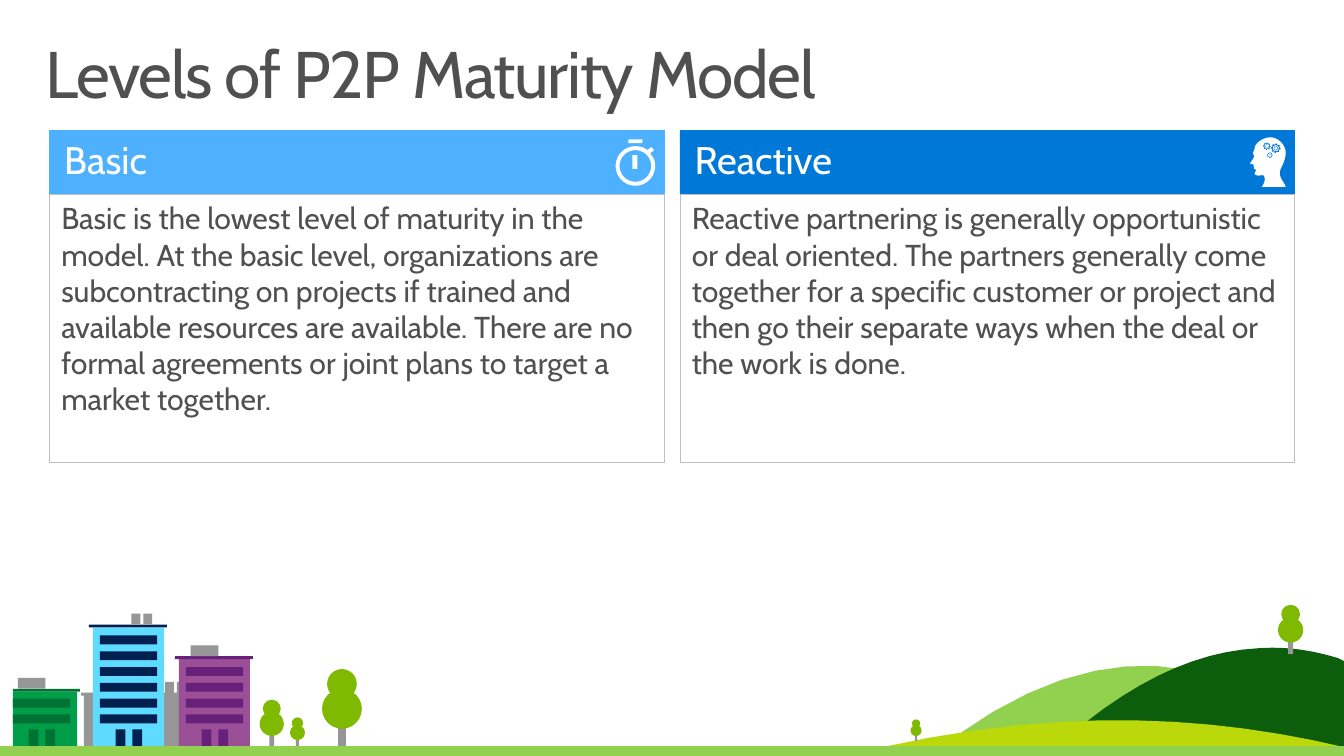
"""Build the P2P maturity levels slide."""
from dataclasses import dataclass
from math import cos, pi, sin

from pptx import Presentation
from pptx.dml.color import RGBColor
from pptx.enum.shapes import MSO_SHAPE
from pptx.enum.text import MSO_ANCHOR, PP_ALIGN
from pptx.util import Inches, Pt


@dataclass(frozen=True)
class Theme:
    """Colours, font and type sizes of the slide."""
    font: str = "Cabin"
    title: int = 48
    heading: int = 28
    body: int = 22
    text: str = "505050"
    white: str = "FFFFFF"
    border: str = "BFBFBF"
    basic: str = "4EB1FF"
    reactive: str = "0078D7"
    grey: str = "969696"
    leaf: str = "7FBA00"
    grass: str = "92D050"
    hill: str = "0C5D0C"
    meadow: str = "BAD80A"
    purple: str = "9B4F96"
    purple_trim: str = "68217A"
    green: str = "009E49"
    green_trim: str = "007233"
    sky: str = "5EDBFF"
    navy: str = "002050"


T = Theme()
GROUND = 7.57
CARDS = (
    (0.5, T.basic, "Basic",
     "Basic is the lowest level of maturity in the model. At the basic level, "
     "organizations are subcontracting on projects if trained and available "
     "resources are available. There are no formal agreements or joint plans "
     "to target a market together."),
    (6.88, T.reactive, "Reactive",
     "Reactive partnering is generally opportunistic or deal oriented. The "
     "partners generally come together for a specific customer or project and "
     "then go their separate ways when the deal or the work is done."),
)


def write_text(tf, text, *, size, color=T.text, anchor=MSO_ANCHOR.TOP,
               inset=(0.12, 0.06), line_spacing=None, tracking=None):
    """Fill a text frame with one formatted paragraph."""
    tf.word_wrap = True
    tf.vertical_anchor = anchor
    tf.margin_left = tf.margin_right = Inches(inset[0])
    tf.margin_top = tf.margin_bottom = Inches(inset[1])
    p = tf.paragraphs[0]
    p.alignment = PP_ALIGN.LEFT
    if line_spacing:
        p.line_spacing = line_spacing
    r = p.add_run()
    r.text = text
    r.font.name = T.font
    r.font.size = Pt(size)
    r.font.color.rgb = RGBColor.from_string(color)
    if tracking:
        r.font._element.set("spc", str(tracking * 100))


def paint(sp, fill, line=None):
    """Give a shape a flat fill and an optional hairline."""
    sp.shadow.inherit = False
    sp.fill.solid()
    sp.fill.fore_color.rgb = RGBColor.from_string(fill)
    if line:
        sp.line.color.rgb = RGBColor.from_string(line)
        sp.line.width = Pt(0.25)
    else:
        sp.line.fill.background()
    return sp


def add_box(s, left, top, width, height, fill, line=None, kind=MSO_SHAPE.RECTANGLE):
    """Add a preset shape measured in inches."""
    sp = s.shapes.add_shape(kind, Inches(left), Inches(top), Inches(width), Inches(height))
    return paint(sp, fill, line)


def add_disc(s, cx, cy, size, fill):
    """Add a circle around a centre."""
    add_box(s, cx - size / 2, cy - size / 2, size, size, fill, kind=MSO_SHAPE.OVAL)


def trace(start, *steps, samples=12):
    """Return outline points from line (x, y) and cubic (six number) steps."""
    points = [start]
    for step in steps:
        if len(step) == 2:
            points.append(step)
            continue
        x0, y0 = points[-1]
        x1, y1, x2, y2, x3, y3 = step
        for i in range(1, samples + 1):
            t = i / samples
            u = 1 - t
            a, b, c, d = u ** 3, 3 * u * u * t, 3 * u * t * t, t ** 3
            points.append((a * x0 + b * x1 + c * x2 + d * x3,
                           a * y0 + b * y1 + c * y2 + d * y3))
    return points


def ring(cx, cy, radii, count=48):
    """Return points around a centre, cycling through the radii."""
    return [(cx + radii[i % len(radii)] * cos(2 * pi * i / count),
             cy + radii[i % len(radii)] * sin(2 * pi * i / count)) for i in range(count)]


def add_outline(s, fill, *contours):
    """Add one freeform made of closed contours."""
    builder = None
    for contour in contours:
        first, *rest = [(Inches(x), Inches(y)) for x, y in contour]
        if builder is None:
            builder = s.shapes.build_freeform(*first)
        else:
            builder.move_to(*first)
        builder.add_line_segments(rest, close=True)
    paint(builder.convert_to_shape(), fill)


def add_back_block(s, left):
    """Add a grey block with two chimneys behind the buildings."""
    profile = ((0, 0.11), (0.43, 0.11), (0.43, 0), (0.52, 0), (0.52, 0.11), (0.55, 0.11),
               (0.55, 0), (0.63, 0), (0.63, 0.11), (0.79, 0.11), (0.79, 0.14),
               (0.75, 0.14), (0.75, 0.67), (0.03, 0.67), (0.03, 0.14), (0, 0.14))
    add_outline(s, T.grey, [(left + x, 6.9 + y) for x, y in profile])


def add_building(s, left, top, floors, wall, trim, chimneys, edge=0.0):
    """Add a building with roof, doors, windows and chimneys, cut at the edge."""
    parts = [(0, top, 0.72, GROUND - top, wall), (-0.04, top - 0.03, 0.79, 0.03, trim)]
    parts += [(x, 7.38, 0.1, 0.18, trim) for x in (0.23, 0.4)]
    parts += [(0.07, 7.23 - 0.16 * i, 0.58, 0.09, trim) for i in range(floors)]
    parts += [(x, top - 0.14, width, 0.11, T.grey) for x, width in chimneys]
    for x, y, width, height, fill in parts:
        start = max(left + x, edge)
        add_box(s, start, y, left + x + width - start, height, fill)


def add_tree(s, cx, base, height):
    """Add a tree whose parts scale with its height."""
    add_box(s, cx - 0.05 * height, base - 0.39 * height, 0.1 * height, 0.39 * height, T.grey)
    add_disc(s, cx, base - 0.49 * height, 0.51 * height, T.leaf)
    add_disc(s, cx, base - 0.81 * height, 0.38 * height, T.leaf)


def add_town(s):
    """Add the buildings and the trees beside them."""
    for left in (1.24, 0.82):
        add_back_block(s, left)
    add_building(s, 1.81, 6.67, 4, T.purple, T.purple_trim, [(0.12, 0.28)])
    add_building(s, 0.06, 7, 2, T.green, T.green_trim, [(0.12, 0.28)], edge=0.13)
    add_building(s, 0.94, 6.35, 6, T.sky, T.navy, [(0.39, 0.09), (0.51, 0.09)])
    for cx, height in ((2.75, 0.48), (3.01, 0.3), (3.46, 0.79)):
        add_tree(s, cx, 7.56, height)


def add_landscape(s):
    """Add the hills, their trees and the strip of grass."""
    add_outline(s, T.grass, trace((13.36, 7.44), (9.67, 7.45),
                                  (11.19, 6.36, 12.36, 6.65, 13.36, 7.44)))
    add_outline(s, T.hill, trace((12.74, 6.56), (13.01, 6.54, 13.28, 6.58, 13.54, 6.66),
                                 (13.6, 6.69), (13.6, 7.63), (10.6, 7.64),
                                 (11.39, 6.91, 12.09, 6.59, 12.74, 6.56)))
    add_outline(s, T.meadow, trace((13.6, 7.56), (8.93, 7.56),
                                   (10.84, 7.14, 12.33, 7.26, 13.6, 7.56)))
    add_tree(s, 9.27, 7.5, 0.22)
    add_tree(s, 13.06, 6.62, 0.5)
    add_box(s, 0, 7.55, 13.6, 0.1, T.grass)


def add_card(s, left, color, heading, body):
    """Add a bordered text panel under a coloured heading bar."""
    panel = add_box(s, left, 1.96, 6.22, 2.72, T.white, T.border)
    write_text(panel.text_frame, body, size=T.body)
    bar = add_box(s, left, 1.32, 6.22, 0.64, color, color)
    write_text(bar.text_frame, heading, size=T.heading, color=T.white,
               anchor=MSO_ANCHOR.MIDDLE, inset=(0.15, 0.08), line_spacing=0.9)


def add_stopwatch(s):
    """Add the stopwatch icon."""
    case = trace((6.43, 1.48), (6.47, 1.48, 6.51, 1.49, 6.54, 1.51), (6.55, 1.52),
                 (6.59, 1.49), (6.62, 1.52), (6.58, 1.55), (6.59, 1.57),
                 (6.62, 1.6, 6.63, 1.64, 6.63, 1.68), (6.63, 1.79, 6.54, 1.88, 6.43, 1.88),
                 (6.32, 1.88, 6.23, 1.79, 6.23, 1.68), (6.23, 1.57, 6.32, 1.48, 6.43, 1.48))
    hand = [(6.4, 1.57), (6.45, 1.57), (6.45, 1.71), (6.4, 1.71)]
    button = [(6.36, 1.41), (6.5, 1.41), (6.5, 1.45), (6.36, 1.45)]
    add_outline(s, T.white, case, ring(6.43, 1.68, [0.16]), hand, button)


def add_thinker(s):
    """Add the head icon with three gears cut out."""
    head = trace((12.86, 1.39), (12.78, 1.39, 12.72, 1.44, 12.7, 1.48),
                 (12.69, 1.53, 12.7, 1.49, 12.68, 1.55), (12.68, 1.57, 12.7, 1.57, 12.69, 1.58),
                 (12.69, 1.6, 12.66, 1.64, 12.65, 1.65), (12.65, 1.66, 12.68, 1.66, 12.69, 1.67),
                 (12.69, 1.67, 12.68, 1.69, 12.69, 1.69), (12.69, 1.71),
                 (12.69, 1.71, 12.7, 1.71, 12.71, 1.72), (12.71, 1.74, 12.68, 1.76, 12.71, 1.77),
                 (12.74, 1.79, 12.78, 1.76, 12.79, 1.78), (12.8, 1.8, 12.81, 1.83, 12.77, 1.89),
                 (13.01, 1.89), (13, 1.85, 12.95, 1.81, 12.95, 1.75),
                 (12.95, 1.7, 13, 1.66, 13.01, 1.56), (13.02, 1.47, 12.93, 1.39, 12.86, 1.39))
    gears = []
    for cx, cy, size in ((12.82, 1.48, 0.04), (12.91, 1.5, 0.05), (12.85, 1.57, 0.03)):
        gears.append(ring(cx, cy, [size, size, 0.8 * size, 0.8 * size], 32))
        gears += [ring(cx, cy, [size * part], 24) for part in (0.6, 0.45, 0.3)]
    add_outline(s, T.white, head, *gears)


def main():
    """Build and save the slide."""
    prs = Presentation()
    prs.slide_width, prs.slide_height = Inches(13.6), Inches(7.65)
    s = prs.slides.add_slide(prs.slide_layouts[6])
    title = s.shapes.add_textbox(Inches(0.3), Inches(0.32), Inches(13), Inches(1))
    write_text(title.text_frame, "Levels of P2P Maturity Model", size=T.title,
               inset=(0.16, 0.1), line_spacing=0.9, tracking=-1)
    add_town(s)
    add_landscape(s)
    for card in CARDS:
        add_card(s, *card)
    add_thinker(s)
    add_stopwatch(s)
    prs.save("out.pptx")


if __name__ == "__main__":
    main()
